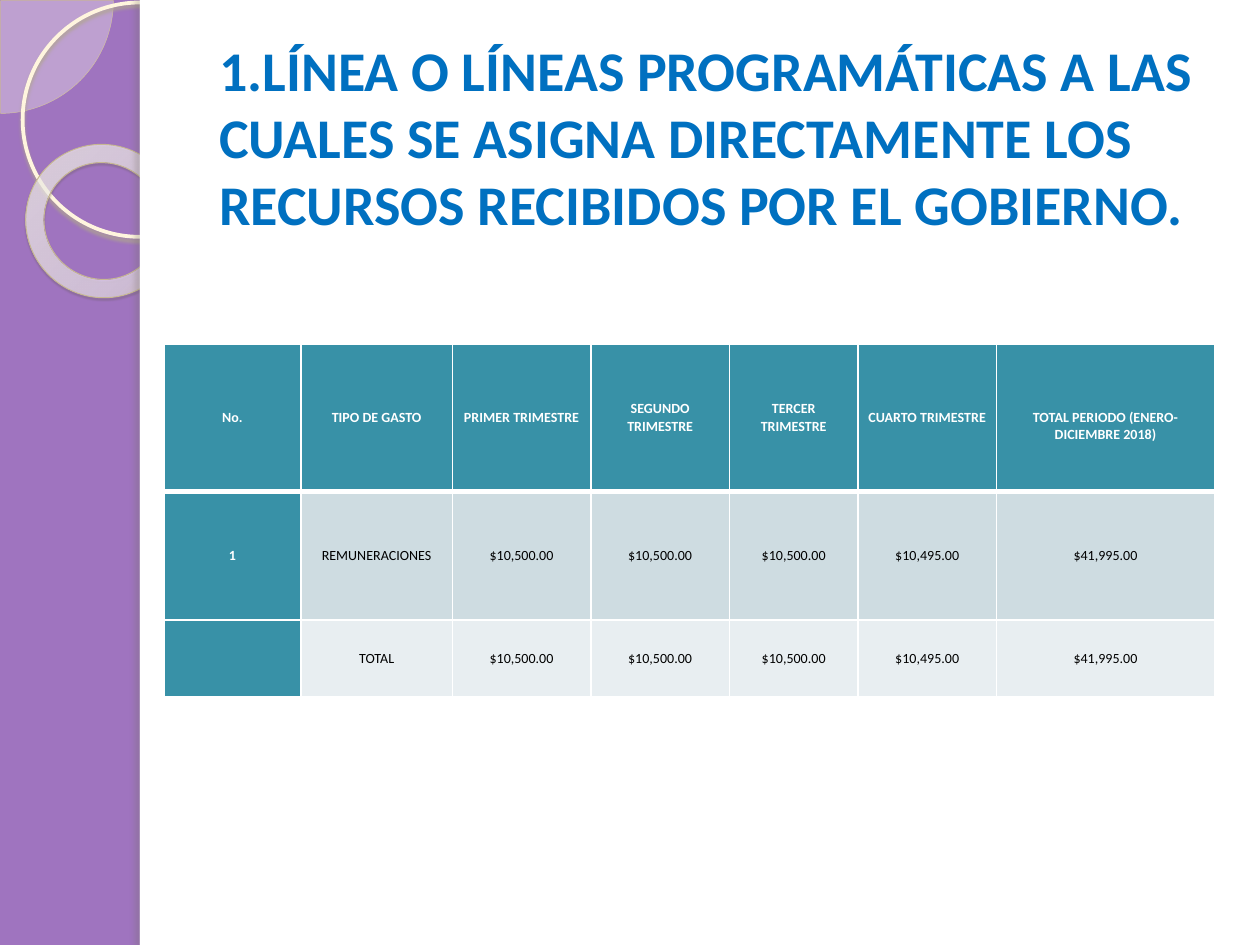
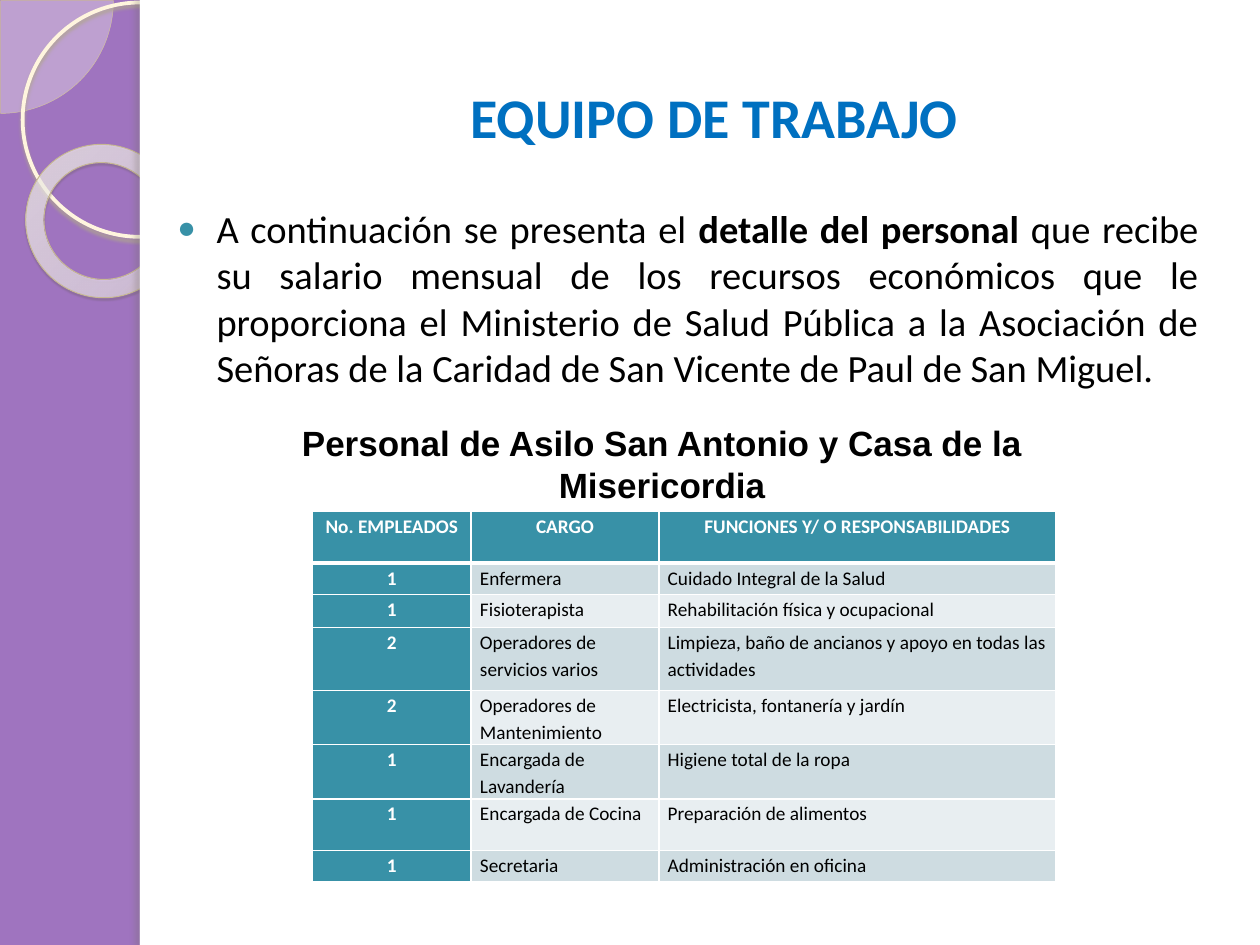
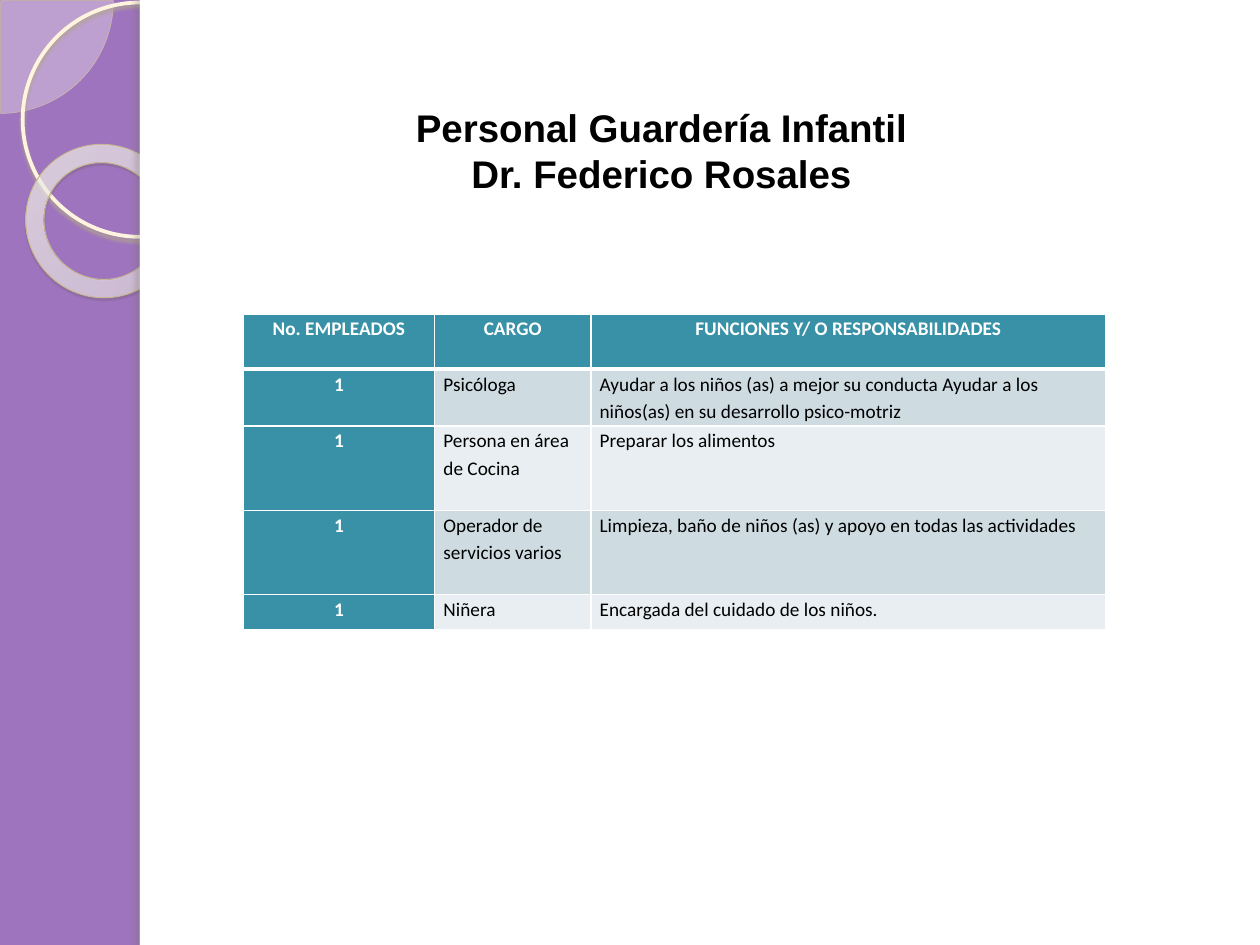
from lxml import etree
from pptx import Presentation
from pptx import util as u
from pptx.dml.color import RGBColor
from pptx.enum import shapes, text
from pptx.oxml import parse_xml
from pptx.oxml.ns import nsdecls, qn

PURPLE = RGBColor(0x9F, 0x74, 0xBF)
BLUE = RGBColor(0x00, 0x70, 0xC0)
TEAL = RGBColor(0x38, 0x91, 0xA7)
ROW_DARK = RGBColor(0xCE, 0xDC, 0xE1)
ROW_LIGHT = RGBColor(0xE8, 0xEE, 0xF1)
WHITE = RGBColor(0xFF, 0xFF, 0xFF)
BLACK = RGBColor(0x00, 0x00, 0x00)
CREAM = RGBColor(0xFE, 0xFA, 0xF4)
SAND = RGBColor(0xD3, 0xC3, 0x9F)
IVORY = RGBColor(0xFF, 0xF5, 0xDE)
KHAKI = RGBColor(0xC7, 0xB8, 0x93)
RING_STOPS = [
    (0, RGBColor(0xFF, 0xFC, 0xF6), 70),
    (70, RGBColor(0xFF, 0xFE, 0xFB), 55),
    (100, RGBColor(0xF0, 0xD2, 0x8E), 60),
]
RING_SHADOW = RGBColor(0x5A, 0x54, 0x44)
CIRCLE_SHADOW = RGBColor(0xB0, 0xA6, 0x8F)
EDGE_SHADOW = RGBColor(0x73, 0x6F, 0x63)

CENTER = text.PP_ALIGN.CENTER
STAFF_HEADER = ["No. EMPLEADOS", "CARGO", "FUNCIONES Y/ O RESPONSABILIDADES"]


def inches(box):
    return [u.Inches(v) for v in box]


def color_xml(color, alpha):
    return f'<a:srgbClr val="{color}"><a:alpha val="{alpha * 1000}"/></a:srgbClr>'


def add_decoration(s, kind, box, fill=None, line=None, width=0, shadow=None):
    sp = s.shapes.add_shape(kind, *inches(box))
    sp.shadow.inherit = False
    if fill is None:
        sp.fill.background()
    else:
        sp.fill.solid()
        sp.fill.fore_color.rgb = fill
    if line is None:
        sp.line.fill.background()
    else:
        sp.line.color.rgb = line
        sp.line.width = u.Pt(width)
    if shadow:
        color, alpha, blur, dist, angle = shadow
        sp.element.spPr.find(qn("a:effectLst")).append(parse_xml(
            f'<a:outerShdw {nsdecls("a")} blurRad="{u.Pt(blur)}" dist="{u.Pt(dist)}" '
            f'dir="{angle * 60000}" algn="tl" rotWithShape="0">{color_xml(color, alpha)}</a:outerShdw>'))
    return sp


def fill_ring(sp):
    stops = "".join(f'<a:gs pos="{pos * 1000}">{color_xml(color, alpha)}</a:gs>'
                    for pos, color, alpha in RING_STOPS)
    spPr = sp.element.spPr
    spPr.replace(spPr.find(qn("a:noFill")), parse_xml(
        f'<a:gradFill {nsdecls("a")} rotWithShape="1"><a:gsLst>{stops}</a:gsLst><a:path path="circle">'
        '<a:fillToRect l="-408000" t="-50000" r="508000" b="150000"/></a:path></a:gradFill>'))


def build_master(prs, s):
    kinds = shapes.MSO_SHAPE
    master = prs.slide_master
    master.background.fill.solid()
    master.background.fill.fore_color.rgb = PURPLE

    pie = add_decoration(s, kinds.PIE, (-0.89, -0.89, 1.79, 1.79), CREAM, SAND, 0.25)
    pie.adjustments[0], pie.adjustments[1] = 0, 54.02
    color = pie.element.spPr.find(qn("a:solidFill")).find(qn("a:srgbClr"))
    etree.SubElement(color, qn("a:alpha")).set("val", "33000")

    circle = add_decoration(s, kinds.OVAL, (0.18, 0.02, 1.86, 1.86), None, IVORY, 2.15,
                            (CIRCLE_SHADOW, 85, 2, 2, 90))
    ring = add_decoration(s, kinds.DONUT, (0.2, 1.15, 1.23, 1.21), None, KHAKI, 0.58,
                          (RING_SHADOW, 35, 1, 1.2, 75))
    ring.rotation = 38.6
    ring.adjustments[0] = 0.12
    fill_ring(ring)

    panel = add_decoration(s, kinds.RECTANGLE, (1.11, 0, 8.89, 7.5), WHITE)
    edge = add_decoration(s, kinds.RECTANGLE, (1.11, 0, 0.08, 7.5), WHITE,
                          shadow=(EDGE_SHADOW, 25, 3, 3, 180))
    for i, sp in enumerate((pie, circle, ring, panel, edge)):
        sp.element.nvSpPr.cNvPr.set("id", str(100 + i))
        master.shapes.element.insert(2 + i, sp.element)


def format_runs(p, size, color, bold=True, font="Calibri"):
    for r in p.runs:
        r.font.name = font
        r.font.size = u.Pt(size)
        r.font.bold = bold
        r.font.color.rgb = color


def set_indent(p, left, first, *bullet):
    pPr = p._p.get_or_add_pPr()
    pPr.set("marL", str(u.Inches(left)))
    pPr.set("indent", str(u.Inches(first)))
    for xml in bullet:
        pPr.append(parse_xml(xml.replace("/>", f' {nsdecls("a")}/>', 1) if xml.count("<") == 1
                             else xml.replace(">", f' {nsdecls("a")}>', 1)))


def format_text(sp, box, content, size, color, font="Calibri", align=CENTER):
    sp.left, sp.top, sp.width, sp.height = inches(box)
    tf = sp.text_frame
    tf.text = content
    tf.word_wrap = True
    tf.auto_size = text.MSO_AUTO_SIZE.NONE
    tf.vertical_anchor = text.MSO_ANCHOR.MIDDLE
    for p in tf.paragraphs:
        p.alignment = align
        format_runs(p, size, color, font=font)
    return tf


def add_intro(s, box, parts):
    tf = s.shapes.add_textbox(*inches(box)).text_frame
    tf.word_wrap = True
    p = tf.paragraphs[0]
    p.alignment = text.PP_ALIGN.JUSTIFY
    p.space_before = u.Pt(6)
    for part in parts:
        p.add_run().text = part
    format_runs(p, 22, BLACK, bold=False)
    p.runs[1].font.bold = True
    set_indent(p, 0.4, -0.31, f'<a:buClr><a:srgbClr val="{TEAL}"/></a:buClr>',
               '<a:buSzPct val="80000"/>', '<a:buFont typeface="Arial"/>', '<a:buChar char="●"/>')


def set_borders(cell, top, bottom):
    tcPr = cell._tc.get_or_add_tcPr()
    for i, (side, width) in enumerate((("L", 1), ("R", 1), ("T", top), ("B", bottom))):
        tcPr.insert(i, parse_xml(
            f'<a:ln{side} {nsdecls("a")} w="{u.Pt(width)}"><a:solidFill>'
            f'<a:srgbClr val="{WHITE}"/></a:solidFill></a:ln{side}>'))


def add_grid(s, left, top, widths, heights, rows, size, spacing=1.0, centered=False):
    box = inches((left, top, sum(widths), sum(heights)))
    table = s.shapes.add_table(len(rows), len(widths), *box).table
    table.first_row = table.horz_banding = False
    for column, width in zip(table.columns, widths):
        column.width = u.Inches(width)
    for i, (row, height) in enumerate(zip(rows, heights)):
        table.rows[i].height = u.Inches(height)
        for j, content in enumerate(row):
            cell = table.cell(i, j)
            heading = i == 0 or j == 0
            cell.text = content
            cell.margin_left = cell.margin_right = u.Inches(0.07)
            cell.margin_top = cell.margin_bottom = 0
            cell.vertical_anchor = text.MSO_ANCHOR.MIDDLE if centered else text.MSO_ANCHOR.TOP
            cell.fill.solid()
            cell.fill.fore_color.rgb = TEAL if heading else ROW_DARK if i % 2 else ROW_LIGHT
            set_borders(cell, 3 if i == 1 else 1, 3 if i == 0 else 1)
            p = cell.text_frame.paragraphs[0]
            p.alignment = CENTER if heading or centered else text.PP_ALIGN.LEFT
            p.line_spacing = spacing
            format_runs(p, size, WHITE if heading else BLACK, heading)
    return table


def build_budget(s):
    tf = format_text(s.shapes.title, (1.14, 0.21, 8.86, 1.74),
                     "LÍNEA O LÍNEAS PROGRAMÁTICAS A LAS CUALES SE ASIGNA DIRECTAMENTE LOS "
                     "RECURSOS RECIBIDOS POR EL GOBIERNO.", 32, BLUE, align=text.PP_ALIGN.LEFT)
    set_indent(tf.paragraphs[0], 0.5, 0, '<a:buFont typeface="+mj-lt"/>',
               '<a:buAutoNum type="arabicPeriod"/>')
    amounts = ["$10,500.00"] * 3 + ["$10,495.00", "$41,995.00"]
    rows = [
        ["No.", "TIPO DE GASTO", "PRIMER TRIMESTRE", "SEGUNDO TRIMESTRE", "TERCER TRIMESTRE",
         "CUARTO TRIMESTRE", "TOTAL PERIODO (ENERO-DICIEMBRE 2018)"],
        ["1", "REMUNERACIONES"] + amounts,
        ["", "TOTAL"] + amounts,
    ]
    table = add_grid(s, 1.3, 2.73, [1.09, 1.2, 1.1, 1.1, 1.02, 1.1, 1.73], [1.17, 1.02, 0.61],
                     rows, 8, centered=True)
    table.cell(0, 6).margin_top = u.Inches(0.14)


def build_team(s):
    format_text(s.shapes.title, (1.57, 0.3, 8.2, 1.25), "EQUIPO DE TRABAJO", 32, BLUE)
    add_intro(s, (1.22, 1.58, 8.39, 1.77), [
        "A continuación se presenta el ", "detalle del personal",
        " que recibe su salario mensual de los recursos económicos que le proporciona el "
        "Ministerio de Salud Pública a la Asociación de Señoras de la Caridad de San Vicente "
        "de Paul de San Miguel."])
    add_grid(s, 2.48, 4.06, [1.26, 1.49, 3.15], [0.41, 0.25, 0.26, 0.5, 0.43, 0.43, 0.41, 0.25], [
        STAFF_HEADER,
        ["1", "Enfermera", "Cuidado Integral de la Salud"],
        ["1", "Fisioterapista", "Rehabilitación física y ocupacional"],
        ["2", "Operadores de servicios varios",
         "Limpieza, baño de ancianos y apoyo en todas las actividades"],
        ["2", "Operadores de Mantenimiento", "Electricista, fontanería y jardín"],
        ["1", "Encargada de Lavandería", "Higiene total de la ropa"],
        ["1", "Encargada de Cocina", "Preparación de alimentos"],
        ["1", "Secretaria", "Administración en oficina"],
    ], 11, 1.15)
    format_text(s.shapes.add_textbox(0, 0, 0, 0), (1.57, 3.29, 7.37, 0.78),
                "Personal de Asilo San Antonio y Casa de la Misericordia", 20, BLACK, "Arial")


def build_nursery(s):
    tf = format_text(s.shapes.title, (1.46, 0.76, 7.48, 0.86),
                     "Personal Guardería Infantil\nDr. Federico Rosales", 22, BLACK, "Arial")
    for p in tf.paragraphs:
        p.space_before = 0
        set_indent(p, 0, 0.1)
    add_grid(s, 1.93, 2.49, [1.52, 1.24, 4.09], [0.44, 0.45, 0.67, 0.67, 0.28], [
        STAFF_HEADER,
        ["1", "Psicóloga", "Ayudar a los niños (as) a mejor su conducta Ayudar a los "
                           "niños(as) en su desarrollo psico-motriz"],
        ["1", "Persona en área de Cocina", "Preparar los alimentos"],
        ["1", "Operador de servicios varios",
         "Limpieza, baño de niños (as) y apoyo en todas las actividades"],
        ["1", "Niñera", "Encargada del cuidado de los niños."],
    ], 11, 1.15)


def main():
    prs = Presentation()
    prs.slide_width, prs.slide_height = u.Inches(10), u.Inches(7.5)
    title_only = prs.slide_layouts[5]
    for i, build in enumerate((build_budget, build_team, build_nursery)):
        s = prs.slides.add_slide(title_only)
        if i == 0:
            build_master(prs, s)
        build(s)
    prs.save("out.pptx")


if __name__ == "__main__":
    main()
